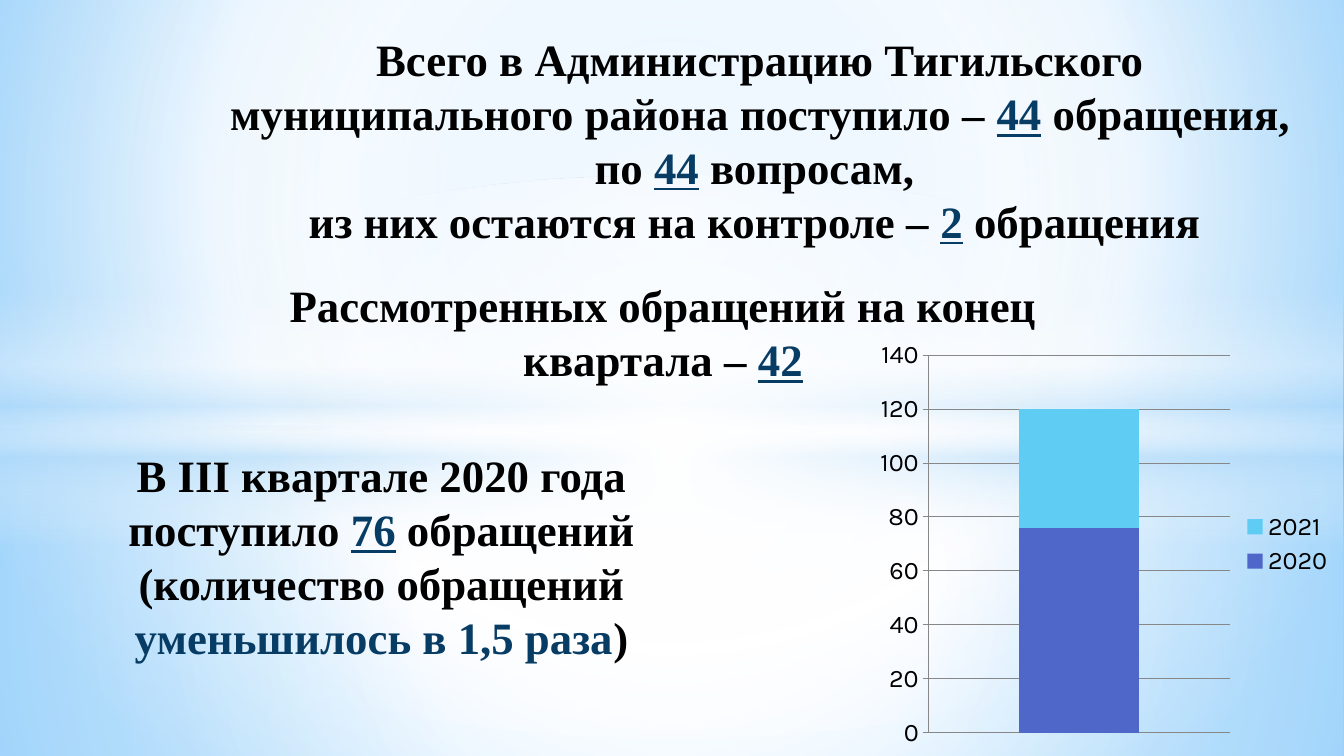
from lxml import etree
from pptx import Presentation
from pptx import util as u
from pptx.chart.data import CategoryChartData
from pptx.dml.color import RGBColor
from pptx.enum import chart as charts, shapes, text
from pptx.oxml.ns import qn

COLORS = {
    "white": "FFFFFF", "haze": "B4DCFA", "sky": "9ED5FF", "edge": "5BB9FF",
    "ink": "000000", "accent": "073C65", "grid": "878787",
    "2020": "4E67C8", "2021": "5ECCF3",
}
WIDTH, HEIGHT = 1344, 756
CENTER = (50, 50, 50, 50)


def px(*lengths):
    return [u.Emu(round(length * 914400 / 100.8)) for length in lengths]


def rgb(name):
    return RGBColor.from_string(COLORS[name])


def set_gradient(fill, owner, stops, focus=None):
    """Stops are (position, colour, opacity) in percent; no focus means top to bottom."""
    fill.solid()
    solid = owner.find(qn("a:solidFill"))
    grad = etree.Element(qn("a:gradFill"), rotWithShape="1")
    stop_list = etree.SubElement(grad, qn("a:gsLst"))
    for position, color, opacity in stops:
        stop = etree.SubElement(stop_list, qn("a:gs"), pos=str(position * 1000))
        tint = etree.SubElement(stop, qn("a:srgbClr"), val=COLORS[color])
        if opacity < 100:
            etree.SubElement(tint, qn("a:alpha"), val=str(opacity * 1000))
    if focus:
        path = etree.SubElement(grad, qn("a:path"), path="circle")
        sides = {side: str(v * 1000) for side, v in zip("ltrb", focus)}
        etree.SubElement(path, qn("a:fillToRect"), **sides)
    else:
        etree.SubElement(grad, qn("a:lin"), ang="5400000", scaled="0")
    owner.replace(solid, grad)


def add_glow(slide, box, kind, stops, focus=None):
    glow = slide.shapes.add_shape(kind, *px(*box))
    glow.shadow.inherit = False
    glow.line.fill.background()
    set_gradient(glow.fill, glow.element.spPr, stops, focus)


def add_backdrop(slide):
    fill = slide.background.fill
    fill.solid()
    set_gradient(fill, slide.element.find(".//" + qn("p:bgPr")),
                 [(0, "sky", 100), (60, "white", 100), (100, "edge", 100)],
                 (20, 10, 20, 60))
    rect, oval = shapes.MSO_SHAPE.RECTANGLE, shapes.MSO_SHAPE.OVAL
    horizon = 426
    add_glow(slide, (0, horizon, WIDTH, HEIGHT - horizon), rect,
             [(0, "white", 91), (37, "white", 76), (100, "haze", 79)], CENTER)
    add_glow(slide, (0, 0, WIDTH, horizon), rect,
             [(0, "white", 89), (48, "white", 62), (100, "haze", 79)], CENTER)
    add_glow(slide, (0, 292, WIDTH, 252), rect,
             [(0, "white", 0), (29, "white", 30), (45, "haze", 40),
              (55, "white", 26), (65, "haze", 60), (100, "white", 0)])
    add_glow(slide, (0, 176, WIDTH, 562), oval,
             [(0, "white", 100), (54, "white", 0)], CENTER)


def add_statement(slide, box, *lines):
    """Parts between asterisks are accented, and underlined when they are numbers."""
    frame = slide.shapes.add_textbox(*px(*box)).text_frame
    frame.word_wrap = True
    frame.auto_size = text.MSO_AUTO_SIZE.SHAPE_TO_FIT_TEXT
    for i, line in enumerate(lines):
        paragraph = frame.add_paragraph() if i else frame.paragraphs[0]
        paragraph.alignment = text.PP_ALIGN.CENTER
        paragraph.font.size = u.Pt(32)
        paragraph.font.name = "Times New Roman"
        paragraph.font.bold = True
        for j, part in enumerate(line.split("*")):
            if not part:
                continue
            run = paragraph.add_run()
            run.text = part
            run.font.color.rgb = rgb("accent" if j % 2 else "ink")
            if part.isdigit():
                run.font.underline = True


def add_yearly_chart(slide, box):
    data = CategoryChartData()
    data.categories = ["1"]
    data.add_series("2020", [76])
    data.add_series("2021", [44])
    chart = slide.shapes.add_chart(
        charts.XL_CHART_TYPE.COLUMN_STACKED, *px(*box), data).chart
    chart.has_title = False
    chart.font.size = u.Pt(18)
    chart.font.name = "Karla"
    chart.font.color.rgb = rgb("ink")
    chart.has_legend = True
    chart.legend.position = charts.XL_LEGEND_POSITION.RIGHT
    chart.legend.include_in_layout = False
    chart.category_axis.visible = False
    counts = chart.value_axis
    counts.major_tick_mark = charts.XL_TICK_MARK.CROSS
    counts.has_major_gridlines = True
    for line in (counts.format.line, counts.major_gridlines.format.line):
        line.color.rgb = rgb("grid")
        line.width = u.Pt(0.75)
    plot = chart.plots[0]
    plot.vary_by_categories = False
    plot.gap_width = 150
    plot.overlap = 100
    for year in plot.series:
        year.format.fill.solid()
        year.format.fill.fore_color.rgb = rgb(year.name)


def main():
    prs = Presentation()
    prs.slide_width, prs.slide_height = px(WIDTH, HEIGHT)
    slide = prs.slides.add_slide(prs.slide_layouts[6])
    add_backdrop(slide)
    add_statement(
        slide, (199, 27, 1122, 228),
        "Всего в Администрацию Тигильского муниципального района "
        "поступило – *44* обращения, по *44* вопросам, ",
        "из них остаются на контроле – *2* обращения ")
    add_statement(slide, (223, 273, 880, 119),
                  "Рассмотренных обращений на конец квартала – *42*")
    add_statement(
        slide, (46, 443, 671, 228),
        "В III квартале 2020 года поступило *76* обращений "
        "(количество обращений *уменьшилось в 1,5 раза*)")
    add_yearly_chart(slide, (871, 332, 473, 424))
    prs.save("out.pptx")


if __name__ == "__main__":
    main()
